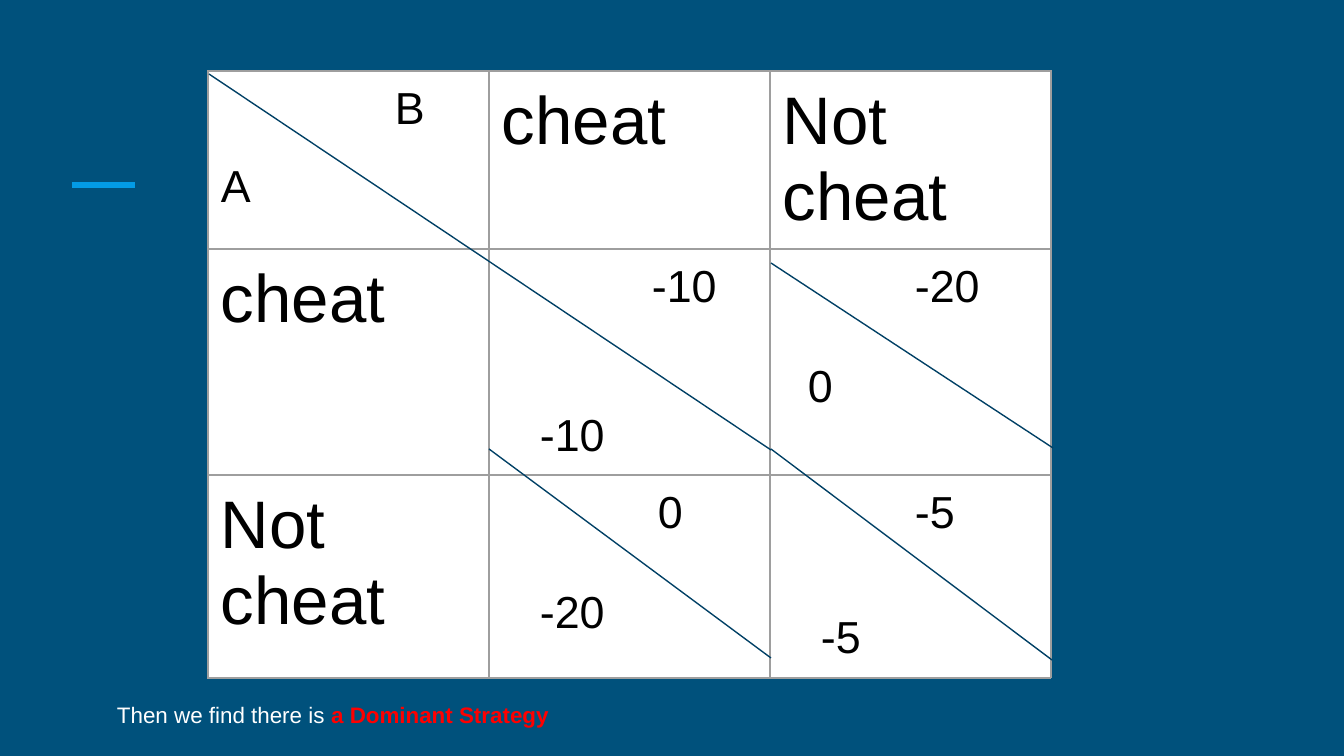
import pptx
import pptx.dml.color
import pptx.enum.shapes
import pptx.enum.text
import pptx.oxml
import pptx.oxml.ns
import pptx.util

PX = 914400 / 134.4
NAVY = pptx.dml.color.RGBColor(0x00, 0x51, 0x7C)
DARK_NAVY = pptx.dml.color.RGBColor(0x00, 0x40, 0x65)
SKY = pptx.dml.color.RGBColor(0x03, 0x9B, 0xE5)
GREY = pptx.dml.color.RGBColor(0x9E, 0x9E, 0x9E)
WHITE = pptx.dml.color.RGBColor(0xFF, 0xFF, 0xFF)
BLACK = pptx.dml.color.RGBColor(0x00, 0x00, 0x00)
RED = pptx.dml.color.RGBColor(0xFF, 0x00, 0x00)
INSET = 13


def px(value):
    return pptx.util.Emu(round(value * PX))


def add_run(paragraph, text, size, color, bold=False):
    run = paragraph.add_run()
    run.text = text
    run.font.name = "Arial"
    run.font.size = pptx.util.Pt(size)
    run.font.bold = bold
    run.font.color.rgb = color


presentation = pptx.Presentation()
presentation.slide_width = px(1344)
presentation.slide_height = px(756)
slide = presentation.slides.add_slide(presentation.slide_layouts[1])
slide.background.fill.solid()
slide.background.fill.fore_color.rgb = NAVY

# Conclusion in the body placeholder; the slide has no title
title = slide.shapes.title
title.element.getparent().remove(title.element)
body = slide.placeholders[1]
body.left, body.top, body.width, body.height = px(104), px(684), px(1035), px(66)
frame = body.text_frame
frame.word_wrap = True
frame.auto_size = pptx.enum.text.MSO_AUTO_SIZE.NONE
frame.vertical_anchor = pptx.enum.text.MSO_ANCHOR.TOP
frame.margin_left = frame.margin_right = px(INSET)
frame.margin_top = frame.margin_bottom = px(INSET)
paragraph = frame.paragraphs[0]
paragraph.line_spacing = 1.15
paragraph.space_before = pptx.util.Pt(3)
paragraph.space_after = pptx.util.Pt(1)
properties = paragraph._p.get_or_add_pPr()
properties.set("marL", "0")
properties.set("indent", "0")
properties.append(pptx.oxml.parse_xml(f'<a:buNone {pptx.oxml.ns.nsdecls("a")}/>'))
add_run(paragraph, "Then we find there is ", 12, WHITE)
add_run(paragraph, "a Dominant Strategy", 12, RED, bold=True)

# Payoff matrix: a heading, or (B value, indent, A value, indent, gap in points)
matrix = [
    [("B", 174, "A", 0, 15), "cheat", "Not cheat"],
    ["cheat", ("-10", 150, "-10", 38, 53), ("-20", 132, "0", 25, 27)],
    ["Not cheat", ("0", 156, "-20", 38, 27), ("-5", 132, "-5", 38, 40)],
]
row_heights = [178, 226, 203]
column_width = 281
table = slide.shapes.add_table(3, 3, px(208), px(71), px(3 * column_width),
                               px(sum(row_heights))).table
table.first_row = False
table.horz_banding = False
for column in table.columns:
    column.width = px(column_width)

for row_index, contents in enumerate(matrix):
    table.rows[row_index].height = px(row_heights[row_index])
    for column_index, content in enumerate(contents):
        cell = table.cell(row_index, column_index)
        cell.margin_left = cell.margin_right = px(INSET)
        cell.margin_top = cell.margin_bottom = px(INSET)
        paragraph = cell.text_frame.paragraphs[0]
        if isinstance(content, str):
            add_run(paragraph, content, 36, BLACK)
        else:
            upper, upper_indent, lower, lower_indent, gap = content
            add_run(paragraph, upper, 24, BLACK)
            paragraph._p.get_or_add_pPr().set("marL", str(px(upper_indent)))
            paragraph = cell.text_frame.add_paragraph()
            paragraph.space_before = pptx.util.Pt(gap)
            add_run(paragraph, lower, 24, BLACK)
            paragraph._p.get_or_add_pPr().set("marL", str(px(lower_indent)))

        # Borders come before the fill in the cell properties
        cell_properties = cell._tc.get_or_add_tcPr()
        for side in ("lnL", "lnR", "lnT", "lnB"):
            cell_properties.append(pptx.oxml.parse_xml(
                f'<a:{side} {pptx.oxml.ns.nsdecls("a")} w="9525"><a:solidFill>'
                f'<a:srgbClr val="{GREY}"/></a:solidFill></a:{side}>'))
        cell.fill.solid()
        cell.fill.fore_color.rgb = WHITE

# Accent dash and the diagonals that split the cells
lines = [
    (72, 185, 135, 185, SKY, 3),
    (209, 74, 771, 450, DARK_NAVY, 0.75),
    (771, 449, 1052, 660, DARK_NAVY, 0.75),
    (489, 449, 771, 658, DARK_NAVY, 0.75),
    (771, 263, 1053, 448, DARK_NAVY, 0.75),
]
for x1, y1, x2, y2, color, width in lines:
    line = slide.shapes.add_connector(pptx.enum.shapes.MSO_CONNECTOR.STRAIGHT,
                                      px(x1), px(y1), px(x2), px(y2))
    line.line.color.rgb = color
    line.line.width = pptx.util.Pt(width)
    line._element.spPr.append(
        pptx.oxml.parse_xml(f'<a:effectLst {pptx.oxml.ns.nsdecls("a")}/>'))

presentation.save("out.pptx")
